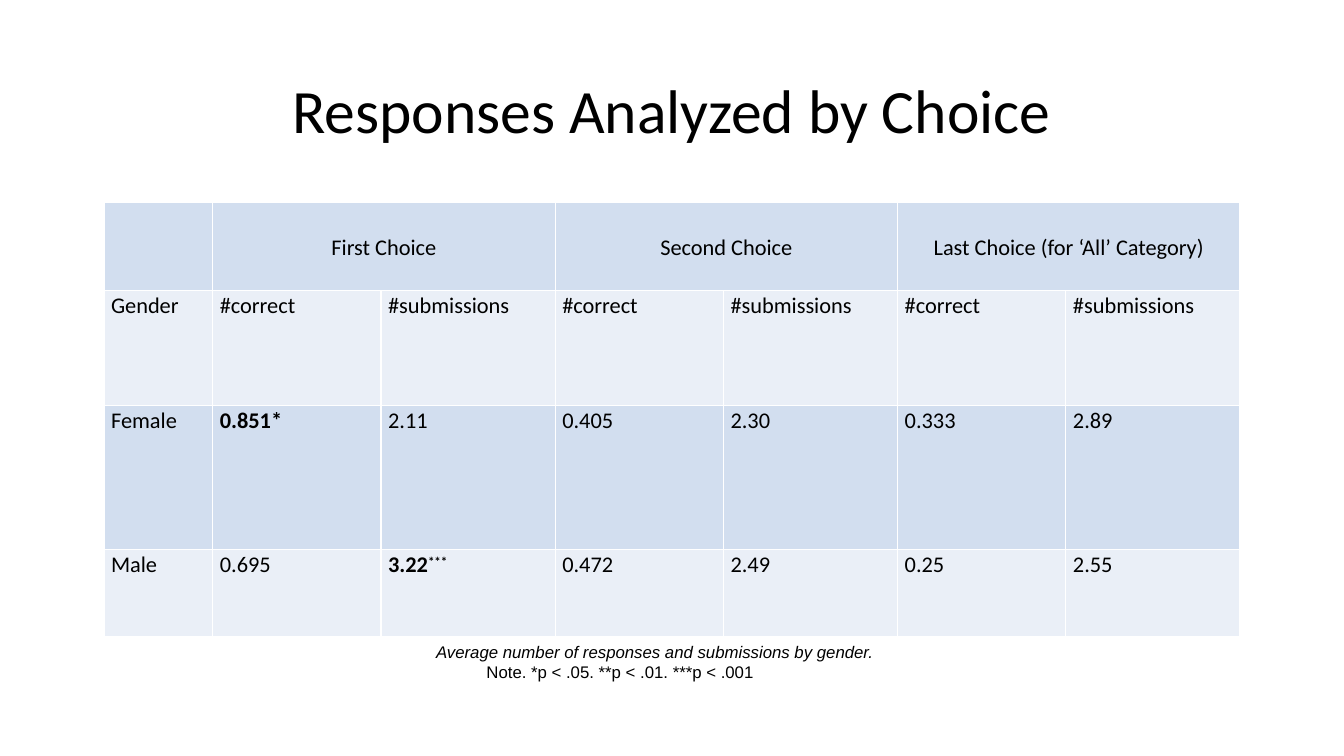
from pptx import Presentation
from pptx.dml.color import RGBColor
from pptx.enum.text import MSO_ANCHOR, MSO_AUTO_SIZE, PP_ALIGN
from pptx.oxml import parse_xml
from pptx.oxml.ns import nsdecls
from pptx.util import Cm, Pt

BLACK = RGBColor(0x00, 0x00, 0x00)
BAND_DARK = RGBColor(0xD2, 0xDE, 0xEF)
BAND_LIGHT = RGBColor(0xEA, 0xEF, 0xF7)
WHITE = RGBColor(0xFF, 0xFF, 0xFF)


def add_text(p, text, size=16, font="Calibri", bold=False, italic=False, raised=False):
    r = p.add_run()
    r.text = text
    r.font.size = Pt(size)
    r.font.name = font
    r.font.bold = bold
    r.font.italic = italic
    r.font.color.rgb = BLACK
    if raised:
        r._r.get_or_add_rPr().set("baseline", "30000")


prs = Presentation()
prs.slide_width = Cm(33.87)
prs.slide_height = Cm(19.05)
s = prs.slides.add_slide(prs.slide_layouts[5])

title = s.shapes.title
title.left, title.top, title.width, title.height = Cm(2.33), Cm(1.01), Cm(29.21), Cm(3.68)
tf = title.text_frame
tf.vertical_anchor = MSO_ANCHOR.MIDDLE
p = tf.paragraphs[0]
p.alignment = PP_ALIGN.CENTER
p.line_spacing = 0.9
add_text(p, "Responses Analyzed by Choice", size=44)

rows = [
    ["", "First Choice", "", "Second Choice", "", "Last Choice (for ‘All’ Category)", ""],
    ["Gender"] + ["#correct", "#submissions"] * 3,
    ["Female", "0.851*", "2.11", "0.405", "2.30", "0.333", "2.89"],
    ["Male", "0.695", "3.22", "0.472", "2.49", "0.25", "2.55"],
]
significant = ["0.851*", "3.22"]
col_widths = [2.74] + [4.24, 4.39] * 3
row_heights = [2.21, 2.9, 3.63, 2.18]

table = s.shapes.add_table(len(rows), len(col_widths), Cm(2.62), Cm(5.11),
                           Cm(sum(col_widths)), Cm(sum(row_heights))).table
table.first_row = False
table.horz_banding = False
for column, width in zip(table.columns, col_widths):
    column.width = Cm(width)
for i, (row, height) in enumerate(zip(rows, row_heights)):
    table.rows[i].height = Cm(height)
    for j, text in enumerate(row):
        cell = table.cell(i, j)
        for side in ("lnL", "lnR", "lnT", "lnB"):
            cell._tc.get_or_add_tcPr().append(parse_xml(
                f'<a:{side} {nsdecls("a")} w="12700"><a:solidFill>'
                f'<a:srgbClr val="{WHITE}"/></a:solidFill></a:{side}>'))
        cell.fill.solid()
        cell.fill.fore_color.rgb = BAND_LIGHT if i % 2 else BAND_DARK
        cell.margin_left = cell.margin_right = Cm(0.18)
        cell.margin_top = cell.margin_bottom = 0
        cell.vertical_anchor = MSO_ANCHOR.TOP if i else MSO_ANCHOR.MIDDLE
        if not text:
            continue
        p = cell.text_frame.paragraphs[0]
        p.alignment = PP_ALIGN.LEFT if i else PP_ALIGN.CENTER
        p.line_spacing = 1.07
        p.space_after = Pt(8)
        add_text(p, text, bold=text in significant)
        if text == "3.22":
            add_text(p, "***", bold=True, raised=True)
for j in (1, 3, 5):
    table.cell(0, j).merge(table.cell(0, j + 1))

caption = s.shapes.add_textbox(Cm(9.47), Cm(16.05), Cm(13.59), Cm(1.27))
tf = caption.text_frame
tf.word_wrap = True
tf.auto_size = MSO_AUTO_SIZE.SHAPE_TO_FIT_TEXT
tf.vertical_anchor = MSO_ANCHOR.MIDDLE
notes = [
    ("Average number of responses and submissions by gender.", True, 1.27),
    ("Note. *p < .05. **p < .01. ***p < .001", False, 2.54),
]
for k, (text, italic, indent) in enumerate(notes):
    p = tf.add_paragraph() if k else tf.paragraphs[0]
    p._p.get_or_add_pPr().set("indent", str(Cm(indent)))
    add_text(p, text, size=12, font="Arial", italic=italic)

prs.save("out.pptx")
